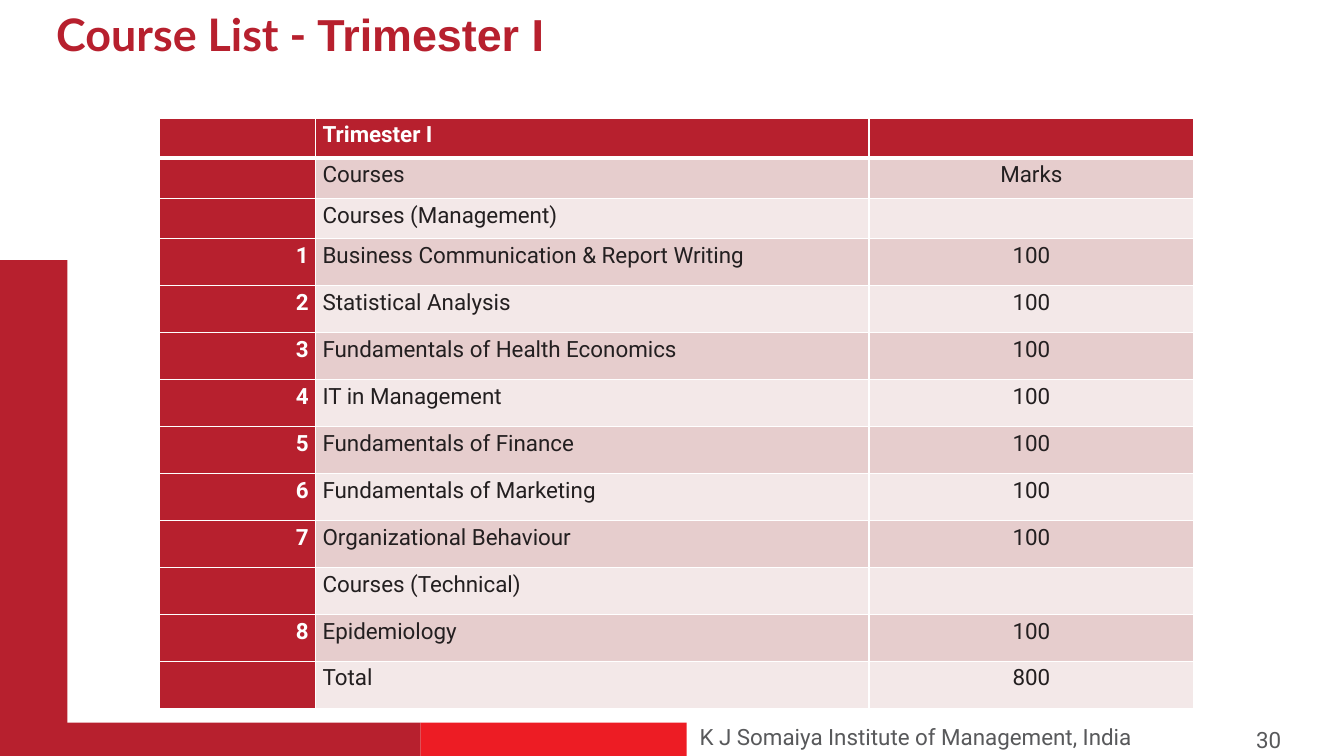
from dataclasses import dataclass

from lxml.etree import SubElement
from pptx import Presentation
from pptx.dml.color import RGBColor as Color
from pptx.enum.shapes import MSO_SHAPE as Preset
from pptx.enum.text import PP_ALIGN as Align
from pptx.oxml.ns import qn
from pptx.util import Inches, Pt


@dataclass(frozen=True)
class Theme:
    """Colours, fonts and type sizes of the slide."""
    crimson: str = "B7202E"
    scarlet: str = "ED1C24"
    white: str = "FFFFFF"
    ink: str = "231F20"
    grey: str = "58595B"
    bands: tuple = ("F3E8E8", "E6CDCD")
    body_font: str = "Roboto"
    title_font: str = "Lato"
    term_font: str = "Arial"
    title_size: int = 32
    body_size: int = 16


@dataclass(frozen=True)
class Frame:
    """A rectangle in inches."""
    left: float
    top: float
    width: float
    height: float

    def lengths(self) -> tuple:
        """Return the four sides as lengths."""
        return tuple(Inches(side) for side in (self.left, self.top, self.width, self.height))


@dataclass(frozen=True)
class Bar:
    """A filled rectangle at the slide edge."""
    frame: Frame
    color: str


@dataclass(frozen=True)
class Course:
    """One row of the course table."""
    number: str
    title: str
    marks: str


THEME = Theme()
BARS = [
    Bar(Frame(0, 2.58, 0.67, 4.92), THEME.crimson),
    Bar(Frame(4.17, 7.17, 2.64, 0.33), THEME.scarlet),
    Bar(Frame(0, 7.17, 4.17, 0.33), THEME.crimson),
]
COURSES = [
    Course("", "Trimester I", ""),
    Course("", "Courses", "Marks"),
    Course("", "Courses (Management)", ""),
    Course("1", "Business Communication & Report Writing", "100"),
    Course("2", "Statistical Analysis", "100"),
    Course("3", "Fundamentals of Health Economics", "100"),
    Course("4", "IT in Management", "100"),
    Course("5", "Fundamentals of Finance", "100"),
    Course("6", "Fundamentals of Marketing", "100"),
    Course("7", "Organizational Behaviour", "100"),
    Course("", "Courses (Technical)", ""),
    Course("8", "Epidemiology", "100"),
    Course("", "Total", "800"),
]
TABLE_FRAME = Frame(1.58, 1.17, 10.26, 5.86)
COLUMN_WIDTHS = (1.55, 5.49, 3.22)
COLUMN_ALIGNS = (Align.RIGHT, Align.LEFT, Align.CENTER)
HEADING_ROWS = 3
HEADING_HEIGHT = 0.4


def write(para, text: str, *, font: str = THEME.body_font, size: int = THEME.body_size,
          color: str = THEME.grey, bold: bool = False, align=Align.LEFT, spacing: float = 1.0) -> None:
    """Add formatted text to a paragraph."""
    para.alignment = align
    para.line_spacing = spacing
    para.font.size = Pt(size)
    if text:
        span = para.add_run()
        span.text = text
        span.font.name = font
        span.font.size = Pt(size)
        span.font.bold = bold
        span.font.color.rgb = Color.from_string(color)


def add_text_box(page, frame: Frame):
    """Add a wrapping text box and return its first paragraph."""
    box = page.shapes.add_textbox(*frame.lengths())
    box.text_frame.word_wrap = True
    return box.text_frame.paragraphs[0]


def add_bar(page, bar: Bar) -> None:
    """Draw one plain filled bar."""
    box = page.shapes.add_shape(Preset.RECTANGLE, *bar.frame.lengths())
    box.shadow.inherit = False
    box.fill.solid()
    box.fill.fore_color.rgb = Color.from_string(bar.color)
    box.line.fill.background()


def add_borders(cell, *, top: float = 1, bottom: float = 1) -> None:
    """Give a cell white borders with widths in points."""
    properties = cell._tc.get_or_add_tcPr()
    for tag, width in (("a:lnL", 1), ("a:lnR", 1), ("a:lnT", top), ("a:lnB", bottom)):
        line = SubElement(properties, qn(tag), w=str(Pt(width)))
        SubElement(SubElement(line, qn("a:solidFill")), qn("a:srgbClr"), val=THEME.white)


def add_course_table(page) -> None:
    """Draw the banded table of courses and marks."""
    table = page.shapes.add_table(len(COURSES), len(COLUMN_WIDTHS), *TABLE_FRAME.lengths()).table
    for column, width in zip(table.columns, COLUMN_WIDTHS):
        column.width = Inches(width)
    course_height = (TABLE_FRAME.height - HEADING_ROWS * HEADING_HEIGHT) / (len(COURSES) - HEADING_ROWS)
    for row, course in enumerate(COURSES):
        table.rows[row].height = Inches(HEADING_HEIGHT if row < HEADING_ROWS else course_height)
        for column, text in enumerate((course.number, course.title, course.marks)):
            cell = table.cell(row, column)
            strong = row == 0 or column == 0
            add_borders(cell, top=3 if row == 1 else 1, bottom=3 if row == 0 else 1)
            cell.fill.solid()
            cell.fill.fore_color.rgb = Color.from_string(THEME.crimson if strong else THEME.bands[row % 2])
            cell.margin_left = cell.margin_right = Inches(0.07)
            cell.margin_top = cell.margin_bottom = 0
            write(cell.text_frame.paragraphs[0], text, color=THEME.white if strong else THEME.ink,
                  bold=strong, align=COLUMN_ALIGNS[column], spacing=1.15)


def main() -> None:
    """Build and save the slide."""
    deck = Presentation()
    deck.slide_width, deck.slide_height = Inches(13.33), Inches(7.5)
    page = deck.slides.add_slide(deck.slide_layouts[6])
    write(add_text_box(page, Frame(6.84, 7.13, 5.09, 0.37)), "K J Somaiya Institute of Management, India")
    for bar in BARS:
        add_bar(page, bar)
    title = add_text_box(page, Frame(0.46, 0.08, 9.96, 1.2))
    for text, font in (("Course List - ", THEME.title_font), ("Trimester I", THEME.term_font)):
        write(title, text, font=font, size=THEME.title_size, color=THEME.crimson, bold=True, spacing=0.9)
    write(add_text_box(page, Frame(12.36, 7.15, 0.87, 0.4)), "30")
    add_course_table(page)
    deck.save("out.pptx")


if __name__ == "__main__":
    main()
